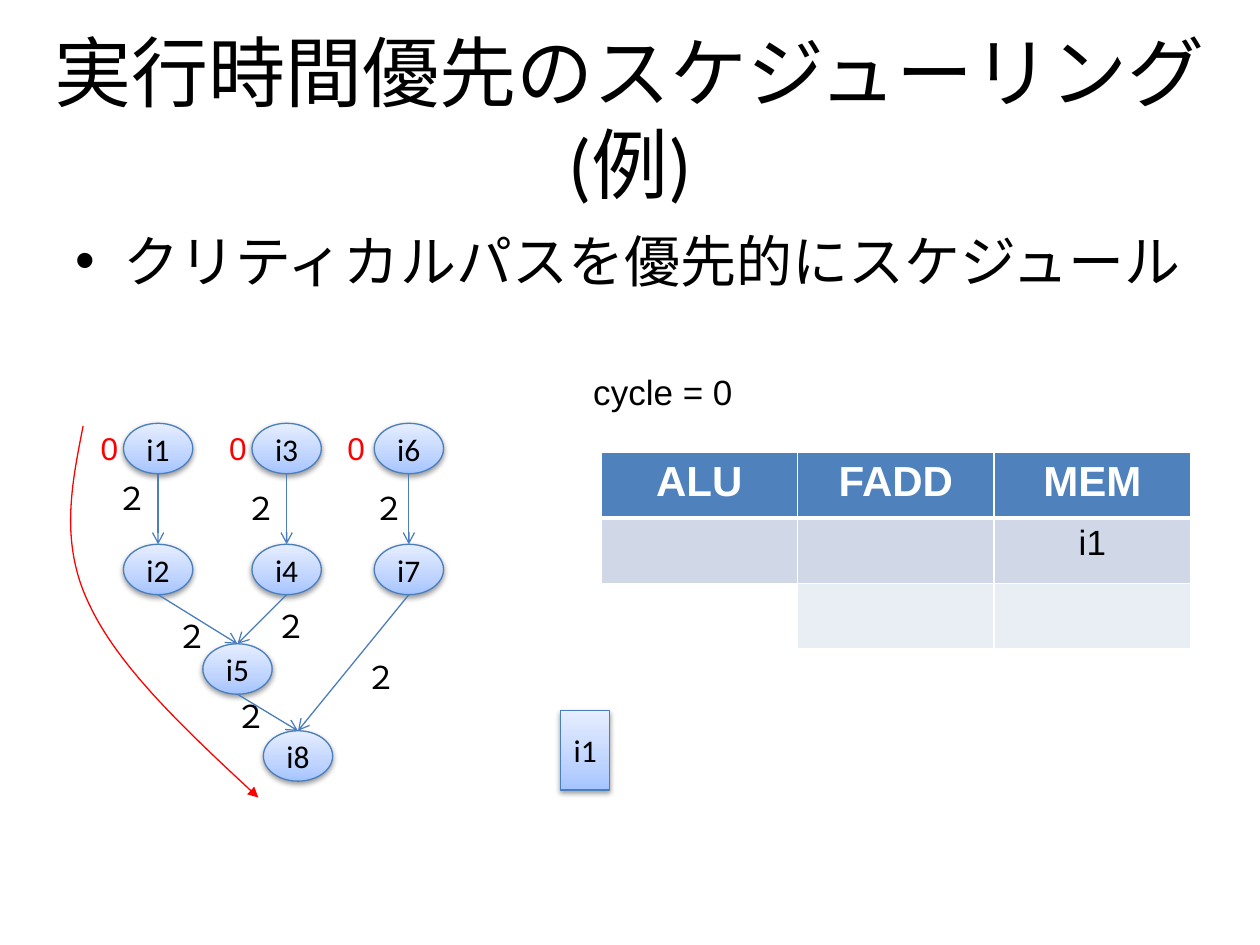
from copy import deepcopy
from dataclasses import dataclass

from lxml.etree import SubElement
from pptx import Presentation
from pptx.dml.color import RGBColor as RGB
from pptx.enum.shapes import MSO_CONNECTOR as CONN, MSO_SHAPE as SHAPE
from pptx.enum.text import MSO_ANCHOR as ANCHOR, MSO_AUTO_SIZE as AUTO, PP_ALIGN as ALIGN
from pptx.oxml.ns import qn
from pptx.util import Inches, Pt


@dataclass(frozen=True)
class Theme:
    black: str = "000000"
    white: str = "FFFFFF"
    red: str = "FF0000"
    edge: str = "4B7EBC"
    header: str = "4F81BD"
    bands: tuple = ("D0D8E8", "E9EDF4")
    gradient: tuple = ((0, "A4C4FF"), (0.35, "BFD4FF"), (1, "E6EEFF"))
    heading_font: str = "Calibri"
    label_font: str = "Arial"
    title: int = 44
    body: int = 32
    header_size: int = 24
    large: int = 20
    label: int = 18
    thin: float = 0.75


def set_all(obj, values):
    for name, value in values.items():
        setattr(obj, name, value)


def add_xml(parent, tag, **attrs):
    return SubElement(parent, qn(tag), {k: str(v) for k, v in attrs.items()})


class SlideBuilder:
    def __init__(self, slide, theme):
        self.shapes = slide.shapes
        self.theme = theme

    def add_words(self, tf, text, size, font, color=None, align=ALIGN.LEFT, bold=False):
        p = tf.paragraphs[0]
        p.alignment = align
        r = p.add_run()
        r.text = text
        set_all(r.font, {"size": Pt(size), "name": font, "bold": bold})
        r.font.color.rgb = RGB.from_string(color or self.theme.black)
        return p

    def text(self, box, text, size, font, wrap=False, anchor=ANCHOR.TOP, **style):
        sp = self.shapes.add_textbox(*map(Inches, box))
        set_all(sp.text_frame, {
            "word_wrap": wrap,
            "auto_size": AUTO.NONE if wrap else AUTO.SHAPE_TO_FIT_TEXT,
            "vertical_anchor": anchor,
        })
        return self.add_words(sp.text_frame, text, size, font, **style)

    def bullet(self, box, text):
        p = self.text(box, text, self.theme.body, self.theme.heading_font, wrap=True)
        p.space_before = Pt(0.2 * self.theme.body)
        pPr = p._p.get_or_add_pPr()
        pPr.set("marL", str(Inches(0.38)))
        pPr.set("indent", str(-Inches(0.38)))
        add_xml(pPr, "a:buFont", typeface="Arial")
        add_xml(pPr, "a:buChar", char="•")

    def label(self, left, top, text, color=None, width=0.37):
        self.text((left, top, width, 0.4), text, self.theme.label,
                  self.theme.label_font, color=color)

    def node(self, kind, box, text):
        """Shape with the blue gradient, a soft shadow and a centred name."""
        sp = self.shapes.add_shape(kind, *map(Inches, box))
        self.outline(sp, self.theme.edge)
        sp.fill.gradient()
        sp.fill.gradient_angle = 90
        first = sp._element.xpath(".//a:gs")[0]
        first.addnext(deepcopy(first))
        for gs, (pos, _) in zip(sp._element.xpath(".//a:gs"), self.theme.gradient):
            gs.set("pos", str(int(pos * 100000)))
        for stop, (_, color) in zip(sp.fill.gradient_stops, self.theme.gradient):
            stop.color.rgb = RGB.from_string(color)
        sp.shadow.inherit = False
        shadow = add_xml(sp._element.spPr.find(qn("a:effectLst")), "a:outerShdw",
                         blurRad=Pt(3.1), dist=Pt(1.6), dir=5400000, rotWithShape=0)
        add_xml(add_xml(shadow, "a:srgbClr", val=self.theme.black), "a:alpha", val=38000)
        tf = sp.text_frame
        set_all(tf, {"vertical_anchor": ANCHOR.MIDDLE, "word_wrap": True,
                     "margin_left": 0, "margin_right": 0,
                     "margin_top": 0, "margin_bottom": 0})
        self.add_words(tf, text, self.theme.label, self.theme.heading_font,
                       align=ALIGN.CENTER)
        return sp

    def outline(self, sp, color, tail=None):
        sp.line.color.rgb = RGB.from_string(color)
        sp.line.width = Pt(self.theme.thin)
        if tail:
            add_xml(sp._element.spPr.find(qn("a:ln")), "a:tailEnd", type=tail)

    def arrow(self, src, dst):
        """Arrow from the bottom of one node to the top of another."""
        cxn = self.shapes.add_connector(
            CONN.STRAIGHT, src.left + src.width // 2, src.top + src.height,
            dst.left + dst.width // 2, dst.top)
        self.outline(cxn, self.theme.edge, "arrow")
        add_xml(cxn._element.spPr, "a:effectLst")

    def curve(self, points, color):
        """Cubic Bezier arrow: a start, then three points for each segment."""
        start, *rest = [(Inches(x), Inches(y)) for x, y in points]
        builder = self.shapes.build_freeform(*start)
        builder.add_line_segments(rest, close=False)
        sp = builder.convert_to_shape()
        lines = sp._element.xpath(".//a:lnTo")
        for i in range(0, len(lines), 3):
            bezier = add_xml(lines[i].getparent(), "a:cubicBezTo")
            for line in lines[i:i + 3]:
                bezier.append(line[0])
                line.getparent().remove(line)
        sp.fill.background()
        sp.shadow.inherit = False
        self.outline(sp, color, "triangle")

    def table(self, left, top, rows, col_width, row_height):
        t = self.theme
        table = self.shapes.add_table(
            len(rows), len(rows[0]), Inches(left), Inches(top),
            Inches(col_width * len(rows[0])), Inches(row_height * len(rows))).table
        table.horz_banding = False
        for i, row in enumerate(rows):
            for j, text in enumerate(row):
                cell = table.cell(i, j)
                head = i == 0
                for side in "LRTB":
                    heavy = (head and side == "B") or (i == 1 and side == "T")
                    ln = add_xml(cell._tc.get_or_add_tcPr(), f"a:ln{side}",
                                 w=Pt(3 if heavy else 1))
                    add_xml(add_xml(ln, "a:solidFill"), "a:srgbClr", val=t.white)
                if text is None:
                    cell.fill.background()
                    continue
                cell.fill.solid()
                cell.fill.fore_color.rgb = RGB.from_string(t.header if head else t.bands[i - 1])
                if text:
                    self.add_words(cell.text_frame, text, t.header_size if head else t.large,
                                   t.label_font, t.white if head else t.black,
                                   ALIGN.CENTER, head)


def main():
    prs = Presentation()
    prs.slide_width, prs.slide_height = Inches(10), Inches(7.5)
    t = Theme()
    s = SlideBuilder(prs.slides.add_slide(prs.slide_layouts[6]), t)

    s.text((0, 0.3, 10, 1.25), "実行時間優先のスケジューリング (例)", t.title, t.heading_font,
           wrap=True, anchor=ANCHOR.MIDDLE, align=ALIGN.CENTER)
    s.bullet((0.5, 1.75, 9, 4.95), "クリティカルパスを優先的にスケジュール")

    columns, load_row, use_row = (0.98, 2, 2.97), 3.36, 4.32
    places = {"i5": (1.61, 5.11), "i8": (2.09, 5.8)}
    for x, load, use in zip(columns, ("i1", "i3", "i6"), ("i2", "i4", "i7")):
        places[load], places[use] = (x, load_row), (x, use_row)
    nodes = {name: s.node(SHAPE.OVAL, (*at, 0.55, 0.4), name)
             for name, at in sorted(places.items())}
    for src, dst in (("i1", "i2"), ("i2", "i5"), ("i3", "i4"), ("i4", "i5"),
                     ("i5", "i8"), ("i6", "i7"), ("i7", "i8")):
        s.arrow(nodes[src], nodes[dst])

    latencies = ((0.83, 3.75), (1.85, 3.83), (2.87, 3.83), (2.09, 4.77),
                 (1.3, 4.85), (2.8, 5.17), (1.77, 5.48))
    for x, y in latencies:
        s.label(x, y, "２")
    s.curve(((0.66, 3.38), (0.57, 3.84), (0.47, 4.31), (0.71, 4.8),
             (0.94, 5.29), (1.49, 5.81), (2.05, 6.33)), t.red)
    s.node(SHAPE.RECTANGLE, (4.45, 5.64, 0.39, 0.63), "i1")
    s.text((4.61, 2.89, 1.32, 0.44), "cycle = 0", t.large, t.label_font)
    for x in (0.7, 1.72, 2.66):
        s.label(x, load_row, "0", t.red, 0.34)

    s.table(4.77, 3.59, (("ALU", "FADD", "MEM"), ("", "", "i1"), (None, "", "")), 1.56, 0.52)
    prs.save("out.pptx")


if __name__ == "__main__":
    main()
